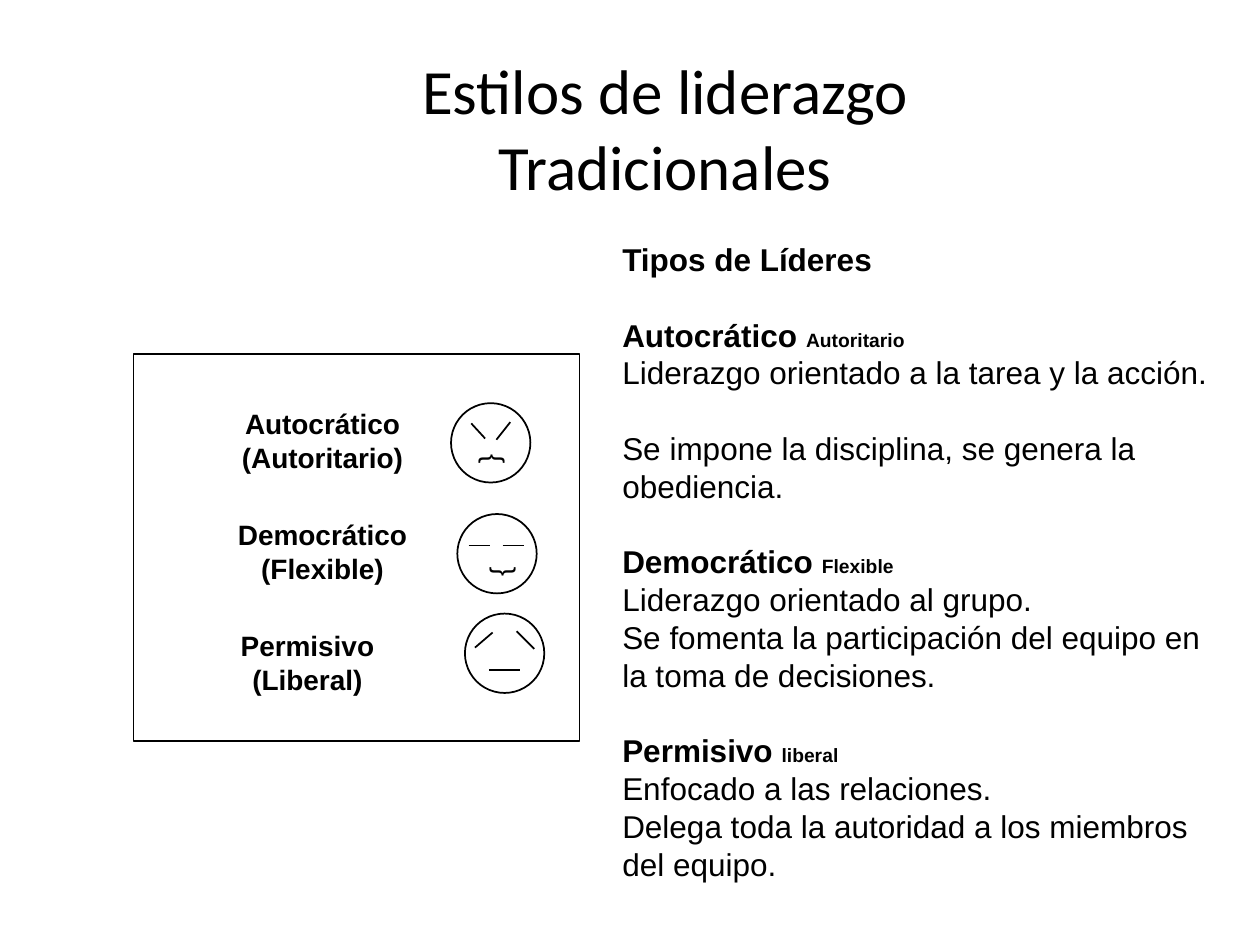
from pptx import Presentation
from pptx.dml.color import RGBColor
from pptx.enum.shapes import MSO_CONNECTOR as Connector, MSO_SHAPE as Shape
from pptx.enum.text import MSO_ANCHOR as Anchor, MSO_AUTO_SIZE as AutoSize, PP_ALIGN as Align
from pptx.oxml.ns import qn
from pptx.util import Inches, Pt
from lxml import etree

BLACK = RGBColor(0x00, 0x00, 0x00)
LINE_WIDTH = Pt(1)
BLANK_LINE = Pt(21.6)

# Style rows: label, label box, face box, strokes within the face, mouth (left, top, rotation)
STYLES = [
    (("Autocrático", "(Autoritario)"), (1.82, 3.18, 1.48, 0.63), (3.58, 3.2, 0.63, 0.63),
     [(0.16, 0.16, 0.27, 0.28), (0.36, 0.29, 0.47, 0.15)], (0.23, 0.27, 90)),
    (("Democrático", "(Flexible)"), (1.79, 4.06, 1.54, 0.63), (3.63, 4.08, 0.63, 0.63),
     [(0.09, 0.25, 0.26, 0.25), (0.36, 0.25, 0.53, 0.25)], (0.21, 0.28, 270)),
    (("Permisivo", "(Liberal)"), (1.78, 4.94, 1.32, 0.63), (3.69, 4.87, 0.63, 0.63),
     [(0.22, 0.15, 0.08, 0.27), (0.55, 0.28, 0.41, 0.14), (0.19, 0.45, 0.44, 0.45)], None),
]

# Leader types: heading, small tag, then paragraphs as (text, blank line before)
LEADERS = [
    ("Autocrático ", "Autoritario",
     [("Liderazgo orientado a la tarea y la acción.", False),
      ("Se impone la disciplina, se genera la obediencia.", True)]),
    ("Democrático ", "Flexible",
     [("Liderazgo orientado al grupo.", False),
      ("Se fomenta la participación del equipo en la toma de decisiones.", False)]),
    ("Permisivo ", "liberal",
     [("Enfocado a las relaciones.", False),
      ("Delega toda la autoridad a los miembros del equipo.", False)]),
]


def add_text(shapes, box, paragraphs, font="Arial", align=Align.LEFT, wrap=True,
             anchor=Anchor.TOP, margins=(0.1, 0.05)):
    """Each paragraph is (runs, space before); each run is (text, size, bold)."""
    text_box = shapes.add_textbox(*map(Inches, box))
    frame = text_box.text_frame
    frame.word_wrap = wrap
    frame.auto_size = AutoSize.SHAPE_TO_FIT_TEXT
    frame.vertical_anchor = anchor
    frame.margin_left = frame.margin_right = Inches(margins[0])
    frame.margin_top = frame.margin_bottom = Inches(margins[1])
    for index, (runs, space) in enumerate(paragraphs):
        paragraph = frame.add_paragraph() if index else frame.paragraphs[0]
        paragraph.alignment = align
        if space:
            paragraph.space_before = space
        for text, size, bold in runs:
            run = paragraph.add_run()
            run.text = text
            run.font.name = font
            run.font.size = Pt(size)
            run.font.bold = bold
            run.font.color.rgb = BLACK
    return text_box


def add_outline(shapes, kind, box):
    shape = shapes.add_shape(kind, *map(Inches, box))
    shape.shadow.inherit = False
    shape.fill.background()
    shape.line.color.rgb = BLACK
    shape.line.width = LINE_WIDTH


def add_stroke(shapes, *ends):
    line = shapes.add_connector(Connector.STRAIGHT, *map(Inches, ends))
    line.line.color.rgb = BLACK
    line.line.width = LINE_WIDTH
    etree.SubElement(line.element.spPr, qn("a:effectLst"))


def add_face(slide, box, strokes, mouth):
    left, top = box[:2]
    shapes = slide.shapes.add_group_shape().shapes
    add_outline(shapes, Shape.OVAL, box)
    for x1, y1, x2, y2 in strokes:
        add_stroke(shapes, left + x1, top + y1, left + x2, top + y2)
    if mouth:
        x, y, rotation = mouth
        brace = add_text(shapes, (left + x, top + y, 0.24, 0.35), [([("{", 16, False)], None)],
                         wrap=False, margins=(0.08, 0.04))
        brace.rotation = rotation


def add_title(slide, box):
    add_text(slide.shapes, box, [([("Estilos de liderazgo Tradicionales", 36, False)], None)],
             font="Calibri", align=Align.CENTER)


def add_styles_panel(slide, box):
    add_outline(slide.shapes, Shape.RECTANGLE, box)
    for label, label_box, face_box, strokes, mouth in STYLES:
        add_text(slide.shapes, label_box, [([(line, 16, True)], None) for line in label],
                 align=Align.CENTER, wrap=False)
        add_face(slide, face_box, strokes, mouth)


def add_leader_types(slide, box):
    paragraphs = [([("Tipos de Líderes", 18, True)], None)]
    for heading, tag, details in LEADERS:
        paragraphs.append(([(heading, 18, True), (tag, 11, True)], BLANK_LINE))
        for text, spaced in details:
            paragraphs.append(([(text, 18, False)], BLANK_LINE if spaced else None))
    add_text(slide.shapes, box, paragraphs, anchor=Anchor.MIDDLE)


def main():
    presentation = Presentation()
    presentation.slide_width = Inches(10)
    presentation.slide_height = Inches(7.5)
    slide = presentation.slides.add_slide(presentation.slide_layouts[6])
    add_title(slide, (2.8, 0.36, 4.96, 1.31))
    add_styles_panel(slide, (1.06, 2.81, 3.54, 3.07))
    add_leader_types(slide, (4.84, 1.98, 4.88, 4.95))
    presentation.save("out.pptx")


if __name__ == "__main__":
    main()
